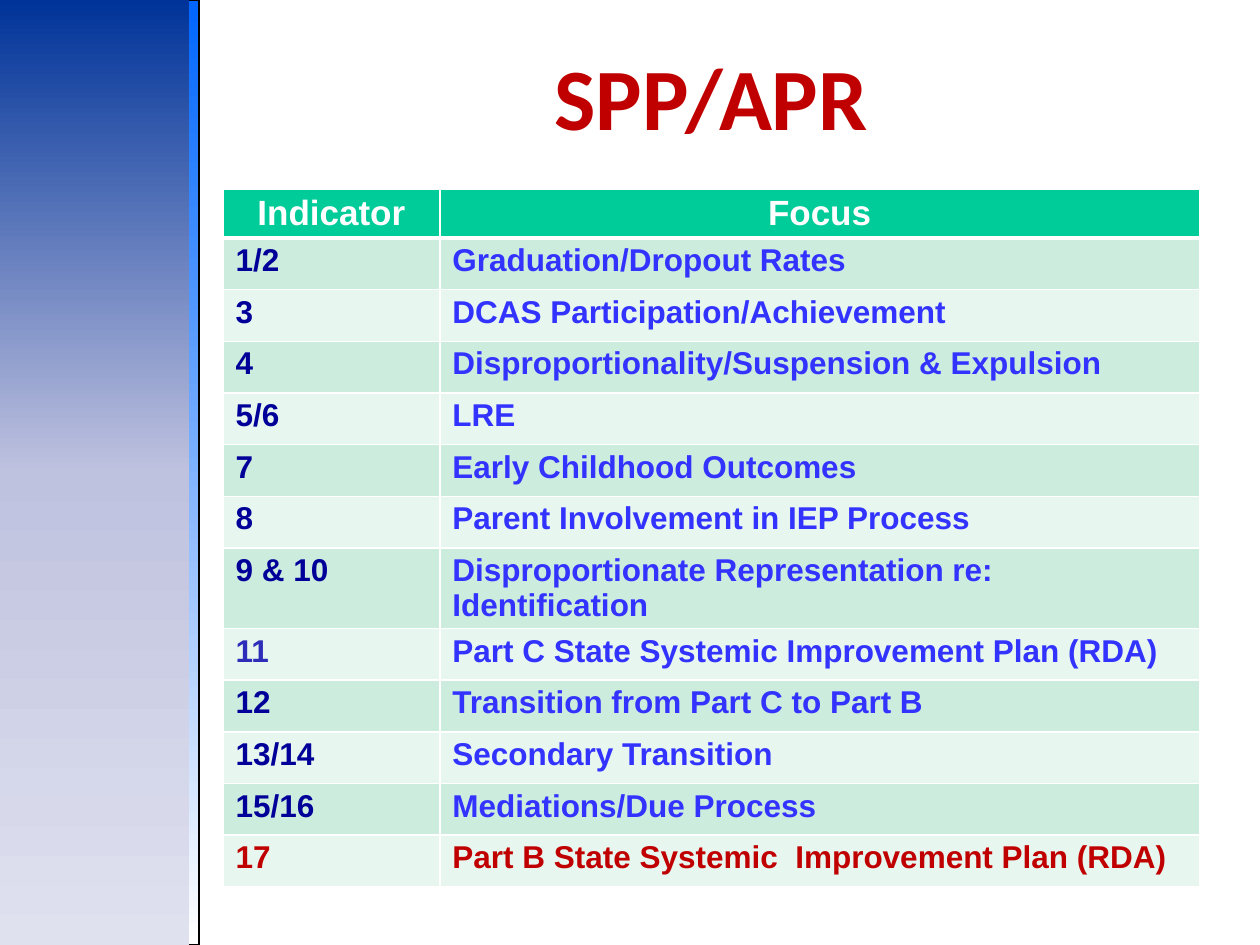
from copy import deepcopy

from lxml.etree import SubElement
from pptx import Presentation
from pptx.dml.color import RGBColor as Rgb
from pptx.enum.shapes import MSO_SHAPE as Shape
from pptx.enum.text import MSO_ANCHOR as Anchor, PP_ALIGN as Align
from pptx.oxml.ns import qn
from pptx.util import Inches, Pt

WIDE, HIGH = 10, 7.5
HEX = {
    "white": "FFFFFF", "black": "000000", "red": "C00000",
    "head": "00CC99", "odd": "CCECDE", "even": "E7F6EF",
    "navy": "000099", "indigo": "2D2DB9", "blue": "3333FF",
    "azure": "0066FF", "deep": "003399", "lilac": "BFC2DF", "mist": "E0E1EF",
}
ROWS = [
    ("1/2", "Graduation/Dropout Rates"),
    ("3", "DCAS Participation/Achievement"),
    ("4", "Disproportionality/Suspension & Expulsion"),
    ("5/6", "LRE"),
    ("7", "Early Childhood Outcomes"),
    ("8", "Parent Involvement in IEP Process"),
    ("9 & 10", "Disproportionate Representation re: Identification"),
    ("11", "Part C State Systemic Improvement Plan (RDA)"),
    ("12", "Transition from Part C to Part B"),
    ("13/14", "Secondary Transition"),
    ("15/16", "Mediations/Due Process"),
    ("17", "Part B State Systemic  Improvement Plan (RDA)"),
]
# Rows whose text departs from navy and blue
TINTS = {"11": ("indigo", "blue"), "17": ("red", "red")}


def color(name):
    return Rgb.from_string(HEX[name])


def style(para, font, size, tint, align=None):
    para.alignment = align
    para.font.name, para.font.size = font, Pt(size)
    para.font.bold = True
    para.font.color.rgb = color(tint)


def band(slide, box, names, edge=None):
    """Draw a bar that fades downward through evenly spaced colours."""
    bar = slide.shapes.add_shape(Shape.RECTANGLE, *map(Inches, box))
    bar.shadow.inherit = False
    bar.fill.gradient()
    bar.fill.gradient_angle = 270
    first = next(bar._element.iter(qn("a:gs")))
    for _ in names[2:]:
        first.addnext(deepcopy(first))
    for i, (stop, name) in enumerate(zip(bar.fill.gradient_stops, names)):
        stop.color.rgb = color(name)
        stop.position = i / (len(names) - 1)
    if edge:
        bar.line.color.rgb = color(edge)
        bar.line.width = Pt(0.75)
    else:
        bar.line.fill.background()


def sidebar(slide, box):
    left, top, wide, high = box
    band(slide, box, ["azure", "white"], "black")
    band(slide, (left, top, wide * 0.95, high), ["deep", "lilac", "mist"])


def title(slide, box, text):
    frame = slide.shapes.add_textbox(*map(Inches, box)).text_frame
    frame.word_wrap = True
    frame.vertical_anchor = Anchor.TOP
    frame.margin_top = Inches(0.09)
    para = frame.paragraphs[0]
    para.text = text
    style(para, "Calibri", 50, "red", Align.CENTER)


def border(cell, widths):
    """Rule the four sides in white, widths in points."""
    props = cell._tc.get_or_add_tcPr()
    for side, width in zip("LRTB", widths):
        line = SubElement(props, qn(f"a:ln{side}"), w=str(Pt(width)))
        fill = SubElement(line, qn("a:solidFill"))
        SubElement(fill, qn("a:srgbClr"), val=HEX["white"])


def paint(cell, text, size, tint, back, widths, align=None):
    border(cell, widths)
    cell.fill.solid()
    cell.fill.fore_color.rgb = color(back)
    cell.margin_top = cell.margin_bottom = Inches(0.04)
    para = cell.text_frame.paragraphs[0]
    para.text = text
    style(para, "Arial", size, tint, align)


def grid(slide, box):
    left, top, wide, high = box
    table = slide.shapes.add_table(len(ROWS) + 1, 2, *map(Inches, box)).table
    for col, share in zip(table.columns, (0.222, 0.778)):
        col.width = Inches(wide * share)
    # The header is 0.8 of a body row
    unit = high / (len(ROWS) + 0.8)
    for r, row in enumerate(table.rows):
        row.height = Inches(unit if r else unit * 0.8)

    # Header
    for c, text in enumerate(("Indicator", "Focus")):
        paint(table.cell(0, c), text, 20, "white", "head", (1, 1, 1, 3),
              Align.CENTER)

    # Body
    for r, pair in enumerate(ROWS, 1):
        back = "odd" if r % 2 else "even"
        widths = (1, 1, 3 if r == 1 else 1, 1)
        tints = TINTS.get(pair[0], ("navy", "blue"))
        for c, (text, tint) in enumerate(zip(pair, tints)):
            paint(table.cell(r, c), text, 18, tint, back, widths)


def main():
    deck = Presentation()
    deck.slide_width, deck.slide_height = Inches(WIDE), Inches(HIGH)
    slide = deck.slides.add_slide(deck.slide_layouts[6])
    sidebar(slide, (0, 0, WIDE * 0.158, HIGH))
    grid(slide, (WIDE * 0.177, HIGH * 0.2, WIDE * 0.775, HIGH * 0.7))
    title(slide, (WIDE * 0.146, HIGH / 30, WIDE * 0.837, 0.92), "SPP/APR")
    deck.save("out.pptx")


if __name__ == "__main__":
    main()
